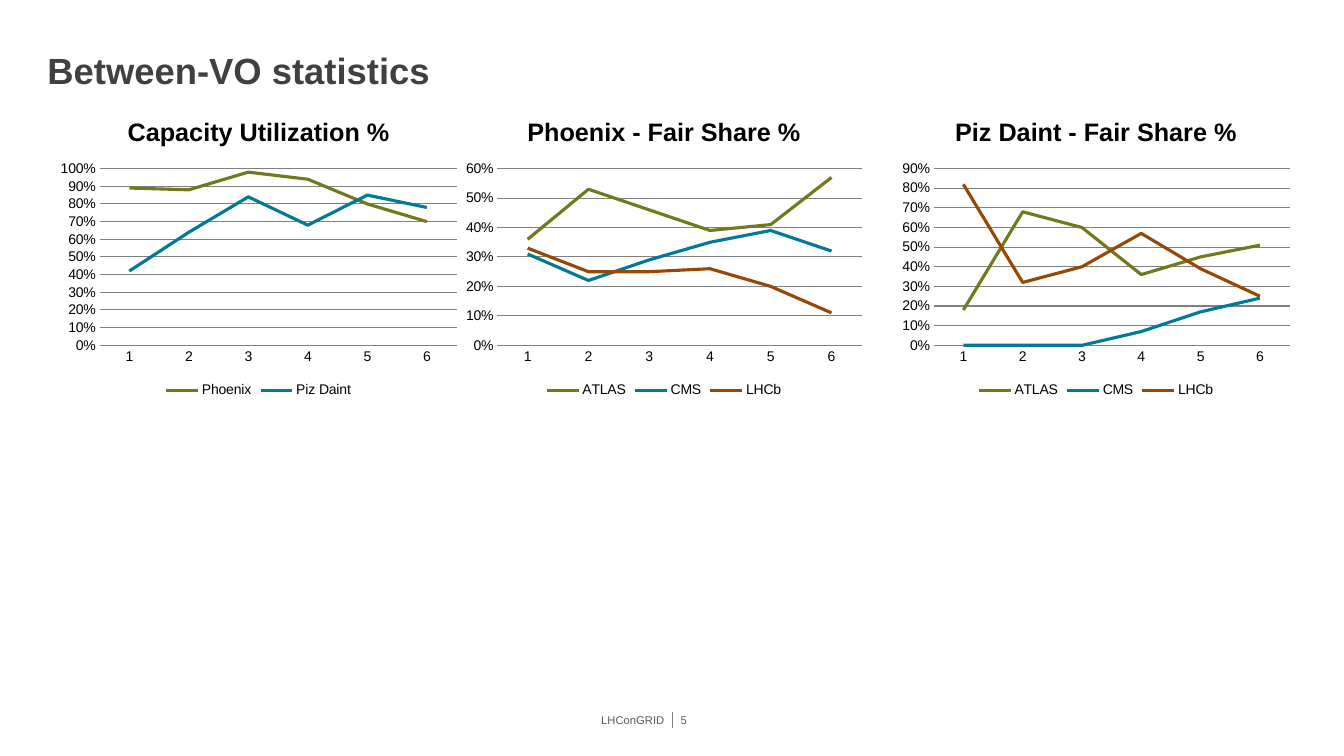
from dataclasses import dataclass

import pptx
import pptx.chart.data
import pptx.dml.color
import pptx.enum.chart
import pptx.enum.shapes
import pptx.enum.text
import pptx.util
from lxml import etree

Inches = pptx.util.Inches
Pt = pptx.util.Pt
ALIGN = pptx.enum.text.PP_ALIGN
ANCHOR = pptx.enum.text.MSO_ANCHOR
DRAWING_NS = "http://schemas.openxmlformats.org/drawingml/2006/main"


@dataclass(frozen=True)
class Theme:
    font: str = "Arial"
    heading: str = "404040"
    footer: str = "595959"
    rule: str = "808080"
    text: str = "000000"
    series: tuple = ("72791C", "007A96", "974806")
    heading_size: float = 26
    chart_title_size: float = 18
    chart_size: float = 10
    footer_size: float = 8
    rule_width: float = 0.75
    series_width: float = 2.25


THEME = Theme()
MONTHS = ["1", "2", "3", "4", "5", "6"]
CHARTS = [
    ((0.52, 0.99, 4.09, 3), "Capacity Utilization %", 1, {
        "Phoenix": (0.89, 0.88, 0.98, 0.94, 0.8, 0.7),
        "Piz Daint": (0.42, 0.64, 0.84, 0.68, 0.85, 0.78),
    }),
    ((4.54, 0.99, 4.09, 3), "Phoenix - Fair Share %", 0.6, {
        "ATLAS": (0.36, 0.53, 0.46, 0.39, 0.41, 0.57),
        "CMS": (0.31, 0.22, 0.29, 0.35, 0.39, 0.32),
        "LHCb": (0.33, 0.25, 0.25, 0.26, 0.2, 0.11),
    }),
    ((8.87, 0.99, 4, 3), "Piz Daint - Fair Share %", 0.9, {
        "ATLAS": (0.18, 0.68, 0.6, 0.36, 0.45, 0.51),
        "CMS": (0, 0, 0, 0.07, 0.17, 0.24),
        "LHCb": (0.82, 0.32, 0.4, 0.57, 0.39, 0.25),
    }),
]


def rgb(value):
    return pptx.dml.color.RGBColor.from_string(value)


def style_font(font, size, color, bold=False):
    font.name = THEME.font
    font.size = Pt(size)
    font.bold = bold
    font.color.rgb = rgb(color)


def style_line(line, color, width):
    line.color.rgb = rgb(color)
    line.width = Pt(width)


def write(frame, text, size, color, bold=False, align=ALIGN.LEFT,
          anchor=ANCHOR.MIDDLE, insets=(0, 0, 0, 0), wrap=True):
    frame.word_wrap = wrap
    frame.auto_size = pptx.enum.text.MSO_AUTO_SIZE.NONE
    frame.vertical_anchor = anchor
    (frame.margin_left, frame.margin_top,
     frame.margin_right, frame.margin_bottom) = map(Inches, insets)
    paragraph = frame.paragraphs[0]
    paragraph.alignment = align
    run = paragraph.add_run()
    run.text = text
    style_font(run.font, size, color, bold)


def add_heading(slide, box, text):
    heading = slide.shapes.title
    heading.left, heading.top, heading.width, heading.height = map(Inches, box)
    write(heading.text_frame, text, THEME.heading_size, THEME.heading, bold=True,
          anchor=ANCHOR.BOTTOM, insets=(0, 0, 0, 0.08), wrap=False)


def style_axes(chart, top_value):
    months, share = chart.category_axis, chart.value_axis
    for axis in (months, share):
        axis.major_tick_mark = pptx.enum.chart.XL_TICK_MARK.NONE
        axis.minor_tick_mark = pptx.enum.chart.XL_TICK_MARK.NONE
        style_font(axis.tick_labels.font, THEME.chart_size, THEME.text)
    style_line(months.format.line, THEME.rule, THEME.rule_width)
    months.has_major_gridlines = False
    share.minimum_scale = 0
    share.maximum_scale = top_value
    share.major_unit = 0.1
    share.tick_labels.number_format = "0%"
    share.tick_labels.number_format_is_linked = False
    share.format.line.fill.background()
    share.has_major_gridlines = True
    style_line(share.major_gridlines.format.line, THEME.rule, THEME.rule_width)


def add_share_chart(slide, box, title, top_value, shares):
    data = pptx.chart.data.CategoryChartData(number_format="0%")
    data.categories = MONTHS
    for name, values in shares.items():
        data.add_series(name, values)
    chart = slide.shapes.add_chart(
        pptx.enum.chart.XL_CHART_TYPE.LINE, *map(Inches, box), data).chart
    style_font(chart.font, THEME.chart_size, THEME.text)

    chart.has_title = True
    title_run = chart.chart_title.text_frame.paragraphs[0].add_run()
    title_run.text = title
    style_font(title_run.font, THEME.chart_title_size, THEME.text, bold=True)
    chart.chart_title.include_in_layout = False

    chart.has_legend = True
    chart.legend.position = pptx.enum.chart.XL_LEGEND_POSITION.BOTTOM
    chart.legend.include_in_layout = False
    style_font(chart.legend.font, THEME.chart_size, THEME.text)

    style_axes(chart, top_value)
    plot = chart.plots[0]
    plot.vary_by_categories = False
    for series, color in zip(plot.series, THEME.series):
        series.smooth = False
        series.marker.style = pptx.enum.chart.XL_MARKER_STYLE.NONE
        style_line(series.format.line, color, THEME.series_width)


def add_footer(slide, box, project, number):
    left, top, width, height = box
    project_width = 4.5
    middle = left + project_width
    divider = slide.shapes.add_connector(
        pptx.enum.shapes.MSO_CONNECTOR.STRAIGHT, Inches(middle), Inches(top),
        Inches(middle), Inches(top + height))
    style_line(divider.line, THEME.rule, THEME.rule_width)
    etree.SubElement(divider.element.spPr, f"{{{DRAWING_NS}}}effectLst")

    parts = [
        (left, project_width, project, ALIGN.RIGHT, (0, 0, 0.08, 0)),
        (middle, width - project_width, number, ALIGN.LEFT, (0.08, 0, 0, 0)),
    ]
    for part_left, part_width, text, align, insets in parts:
        part = slide.shapes.add_textbox(
            Inches(part_left), Inches(top), Inches(part_width), Inches(height))
        write(part.text_frame, text, THEME.footer_size, THEME.footer,
              align=align, insets=insets)


def main():
    deck = pptx.Presentation()
    deck.slide_width, deck.slide_height = Inches(13.33), Inches(7.5)
    slide = deck.slides.add_slide(deck.slide_layouts.get_by_name("Title Only"))
    add_heading(slide, (0.47, 0.05, 12.39, 0.94), "Between-VO statistics")
    for box, title, top_value, shares in CHARTS:
        add_share_chart(slide, box, title, top_value, shares)
    add_footer(slide, (2.17, 7.06, 4.92, 0.16), "LHConGRID", "5")
    deck.save("out.pptx")


if __name__ == "__main__":
    main()
